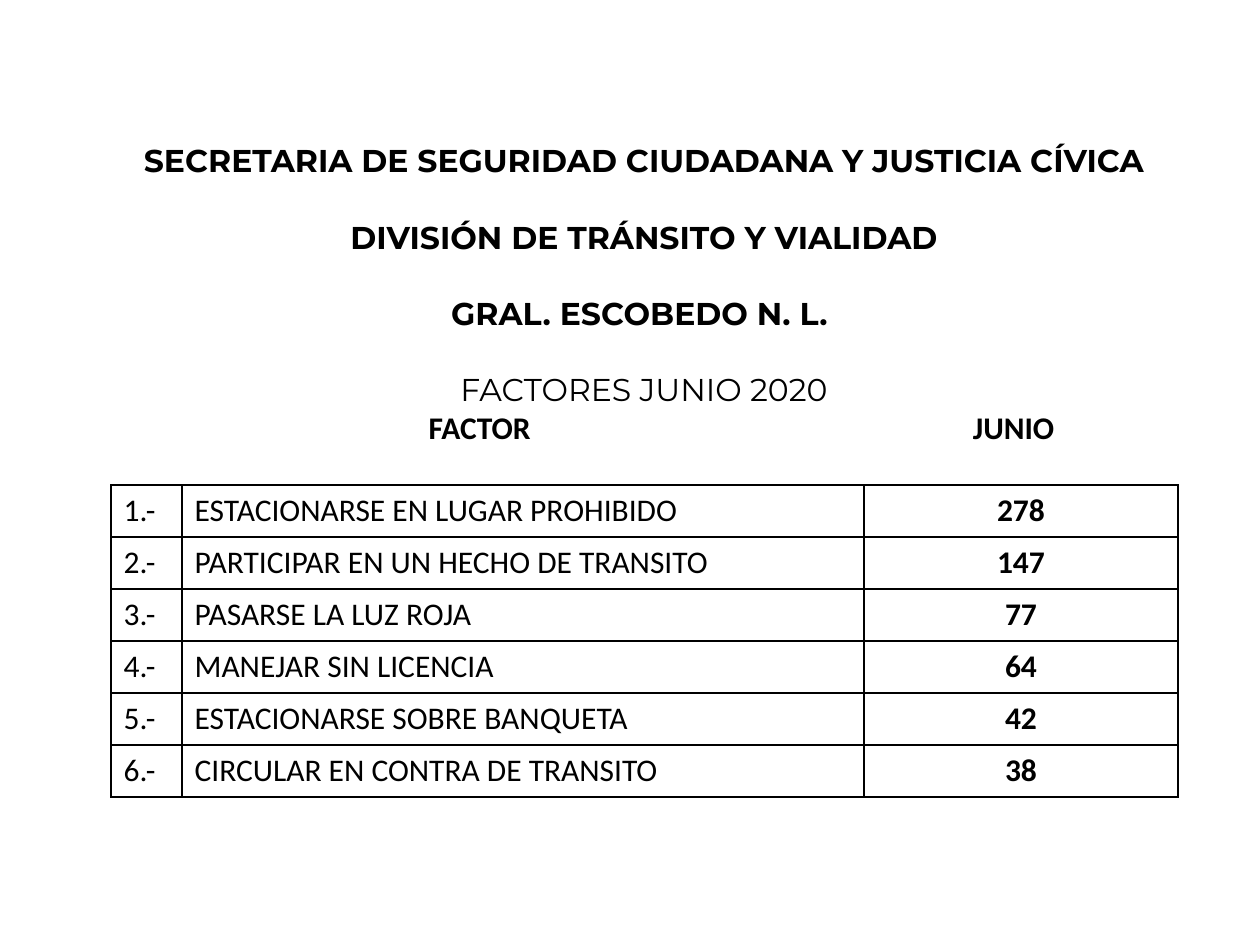
from dataclasses import dataclass

from lxml.etree import SubElement
from pptx import Presentation
from pptx.dml.color import RGBColor
from pptx.enum.text import MSO_ANCHOR, MSO_AUTO_SIZE, PP_ALIGN
from pptx.oxml.ns import qn
from pptx.util import Emu, Pt


@dataclass(frozen=True)
class Theme:
    ink: str = "000000"
    heading_font: str = "Montserrat"
    table_font: str = "Calibri"
    text_size: int = 18
    heading_gap: int = 22
    border_width: int = 1


def px(length):
    return Emu(round(length * 914400 / 126))


class SlideBuilder:
    def __init__(self, deck, theme):
        self.theme = theme
        self.page = deck.slides.add_slide(deck.slide_layouts[5])

    def span(self, para, text, font, bold=False):
        span = para.add_run()
        span.text = text
        span.font.name = font
        span.font.size = Pt(self.theme.text_size)
        span.font.bold = bold
        span.font.color.rgb = RGBColor.from_string(self.theme.ink)

    def tab_stops(self, para, positions):
        tabs = SubElement(para._p.get_or_add_pPr(), qn("a:tabLst"))
        for position in positions:
            SubElement(tabs, qn("a:tab"), pos=str(px(position)), algn="ctr")

    def title(self, left, top, width, height, lines, columns, stops):
        box = self.page.shapes.title
        box.left, box.top, box.width, box.height = map(px, (left, top, width, height))
        frame = box.text_frame
        frame.word_wrap = True
        frame.auto_size = MSO_AUTO_SIZE.NONE
        frame.vertical_anchor = MSO_ANCHOR.TOP
        for index, (text, bold) in enumerate(lines):
            para = frame.add_paragraph() if index else frame.paragraphs[0]
            para.alignment = PP_ALIGN.CENTER
            para.space_before = Pt(self.theme.heading_gap if index else 0)
            self.span(para, text, self.theme.heading_font, bold)
        para = frame.add_paragraph()
        para.alignment = PP_ALIGN.LEFT
        para.space_before = Pt(0)
        self.tab_stops(para, stops)
        for column in columns:
            self.span(para, "\t" + column, self.theme.table_font, True)

    def borders(self, cell):
        properties = cell._tc.get_or_add_tcPr()
        for side in ("lnL", "lnR", "lnT", "lnB"):
            line = SubElement(properties, qn(f"a:{side}"), w=str(Pt(self.theme.border_width)))
            fill = SubElement(line, qn("a:solidFill"))
            SubElement(fill, qn("a:srgbClr"), val=self.theme.ink)

    def table(self, left, top, widths, row_height, rows):
        table = self.page.shapes.add_table(
            len(rows), len(widths), px(left), px(top),
            px(sum(widths)), px(row_height * len(rows))).table
        table.first_row = False
        table.horz_banding = False
        for column, width in zip(table.columns, widths):
            column.width = px(width)
        for row, values in zip(table.rows, rows):
            row.height = px(row_height)
            for index, (cell, value) in enumerate(zip(row.cells, values)):
                is_count = index == len(widths) - 1
                self.borders(cell)
                cell.fill.background()
                para = cell.text_frame.paragraphs[0]
                para.alignment = PP_ALIGN.CENTER if is_count else PP_ALIGN.LEFT
                self.span(para, value, self.theme.table_font, is_count)


def main():
    deck = Presentation()
    deck.slide_width, deck.slide_height = px(1260), px(945)
    builder = SlideBuilder(deck, Theme())
    heading = [
        ("SECRETARIA DE SEGURIDAD CIUDADANA Y JUSTICIA CÍVICA", True),
        ("DIVISIÓN DE TRÁNSITO Y VIALIDAD", True),
        ("GRAL. ESCOBEDO N. L. ", True),
        ("FACTORES JUNIO 2020", False),
    ]
    builder.title(111, 135, 1066, 357, heading, ("FACTOR", "JUNIO"), (356, 890))
    factors = [
        ("ESTACIONARSE EN LUGAR PROHIBIDO", 278),
        ("PARTICIPAR EN UN HECHO DE TRANSITO", 147),
        ("PASARSE LA LUZ ROJA", 77),
        ("MANEJAR SIN LICENCIA", 64),
        ("ESTACIONARSE SOBRE BANQUETA", 42),
        ("CIRCULAR EN CONTRA DE TRANSITO", 38),
    ]
    rows = [(f"{number}.-", factor, str(count))
            for number, (factor, count) in enumerate(factors, 1)]
    builder.table(111, 485, (71, 682, 314), 52, rows)
    deck.save("out.pptx")


if __name__ == "__main__":
    main()
